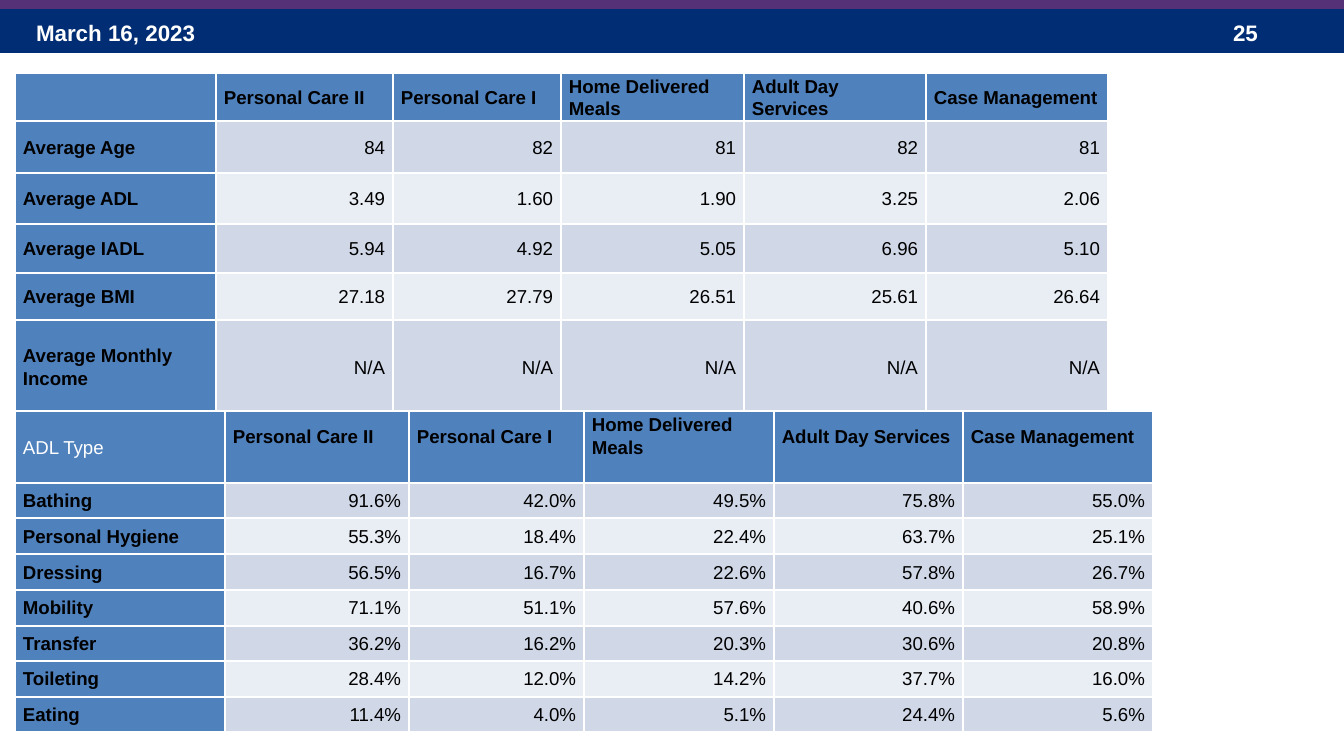
from lxml.etree import SubElement
from pptx import Presentation
from pptx.dml.color import RGBColor
from pptx.enum.shapes import MSO_SHAPE as Shape
from pptx.enum.text import MSO_ANCHOR as Anchor, PP_ALIGN as Align
from pptx.oxml.ns import qn
from pptx.util import Emu, Pt

PX = 914400 / 134.4
COLORS = {
    "navy": "002D73", "purple": "553278", "header": "4F81BD",
    "odd": "D0D8E8", "even": "E9EDF4", "white": "FFFFFF", "black": "000000",
}
SERVICES = ["Personal Care II", "Personal Care I", "Home Delivered Meals",
            "Adult Day Services", "Case Management"]
AVERAGES = [
    ["", *SERVICES],
    ["Average Age", "84", "82", "81", "82", "81"],
    ["Average ADL", "3.49", "1.60", "1.90", "3.25", "2.06"],
    ["Average IADL", "5.94", "4.92", "5.05", "6.96", "5.10"],
    ["Average BMI", "27.18", "27.79", "26.51", "25.61", "26.64"],
    ["Average Monthly Income"] + ["N/A"] * len(SERVICES),
]
ADL_TYPES = [
    ["ADL Type", *SERVICES],
    ["Bathing", "91.6%", "42.0%", "49.5%", "75.8%", "55.0%"],
    ["Personal Hygiene", "55.3%", "18.4%", "22.4%", "63.7%", "25.1%"],
    ["Dressing", "56.5%", "16.7%", "22.6%", "57.8%", "26.7%"],
    ["Mobility", "71.1%", "51.1%", "57.6%", "40.6%", "58.9%"],
    ["Transfer", "36.2%", "16.2%", "20.3%", "30.6%", "20.8%"],
    ["Toileting", "28.4%", "12.0%", "14.2%", "37.7%", "16.0%"],
    ["Eating", "11.4%", "4.0%", "5.1%", "24.4%", "5.6%"],
]


def px(length):
    return Emu(round(length * PX))


def rgb(name):
    return RGBColor.from_string(COLORS[name])


def apply(target, **values):
    for name, value in values.items():
        setattr(target, name, value)


def style_paragraph(paragraph, size, color, bold, **values):
    apply(paragraph, **values)
    apply(paragraph.font, name="Arial", size=Pt(size), bold=bold)
    paragraph.font.color.rgb = rgb(color)


def add_bar(slide, left, top, width, height, color):
    bar = slide.shapes.add_shape(Shape.RECTANGLE, *map(px, (left, top, width, height)))
    bar.shadow.inherit = False
    bar.fill.solid()
    bar.fill.fore_color.rgb = rgb(color)
    bar.line.fill.background()


def add_label(slide, left, top, width, height, text):
    frame = slide.shapes.add_textbox(*map(px, (left, top, width, height))).text_frame
    apply(frame, word_wrap=True, vertical_anchor=Anchor.MIDDLE, text=text,
          margin_left=px(13), margin_right=px(13), margin_top=0, margin_bottom=0)
    style_paragraph(frame.paragraphs[0], 12, "white", True)


def add_banner(slide, left, top, width):
    add_bar(slide, left, top + 9, width, 44, "navy")
    add_label(slide, left + 23, top + 13, 313, 40, "March 16, 2023")
    add_label(slide, left + 1220, top + 13, 101, 40, "25")
    add_bar(slide, left, top - 3, width, 12, "purple")


def add_borders(cell):
    properties = cell._tc.get_or_add_tcPr()
    for side in ("a:lnL", "a:lnR", "a:lnT", "a:lnB"):
        line = SubElement(properties, qn(side), w=str(Pt(1)))
        fill = SubElement(line, qn("a:solidFill"))
        SubElement(fill, qn("a:srgbClr"), val=COLORS["white"])


def style_cell(cell, text, row, column, header_bottom):
    is_heading = row == 0 or column == 0
    is_corner = row == 0 and column == 0
    is_service = row == 0 and column > 0
    apply(cell, text=text, vertical_anchor=Anchor.MIDDLE,
          margin_left=px(8), margin_right=px(8), margin_top=0,
          margin_bottom=px(header_bottom) if is_service else 0)
    add_borders(cell)
    cell.fill.solid()
    cell.fill.fore_color.rgb = rgb("header" if is_heading else "odd" if row % 2 else "even")
    style_paragraph(cell.text_frame.paragraphs[0], 10,
                    "white" if is_corner else "black", is_heading and not is_corner,
                    alignment=Align.LEFT if is_heading else Align.RIGHT,
                    line_spacing=1.07)


def add_data_table(slide, left, top, widths, heights, rows, header_bottom=0):
    box = map(px, (left, top, sum(widths), sum(heights)))
    table = slide.shapes.add_table(len(rows), len(widths), *box).table
    apply(table, first_row=False, horz_banding=False)
    for column, width in zip(table.columns, widths):
        column.width = px(width)
    for row, height in zip(table.rows, heights):
        row.height = px(height)
    for row, values in enumerate(rows):
        for column, text in enumerate(values):
            style_cell(table.cell(row, column), text, row, column, header_bottom)


def main():
    presentation = Presentation()
    apply(presentation, slide_width=px(1344), slide_height=px(756))
    slide = presentation.slides.add_slide(presentation.slide_layouts[6])
    add_banner(slide, 0, 0, 1344)
    add_data_table(slide, 15, 73, [201, 177, 168, 183, 182, 182],
                   [45, 52, 51, 49, 47, 94], AVERAGES)
    add_data_table(slide, 15, 411, [210, 184, 175, 190, 189, 190],
                   [72, 35, 36, 36, 36, 35, 36, 35], ADL_TYPES, header_bottom=22)
    presentation.save("out.pptx")


if __name__ == "__main__":
    main()
